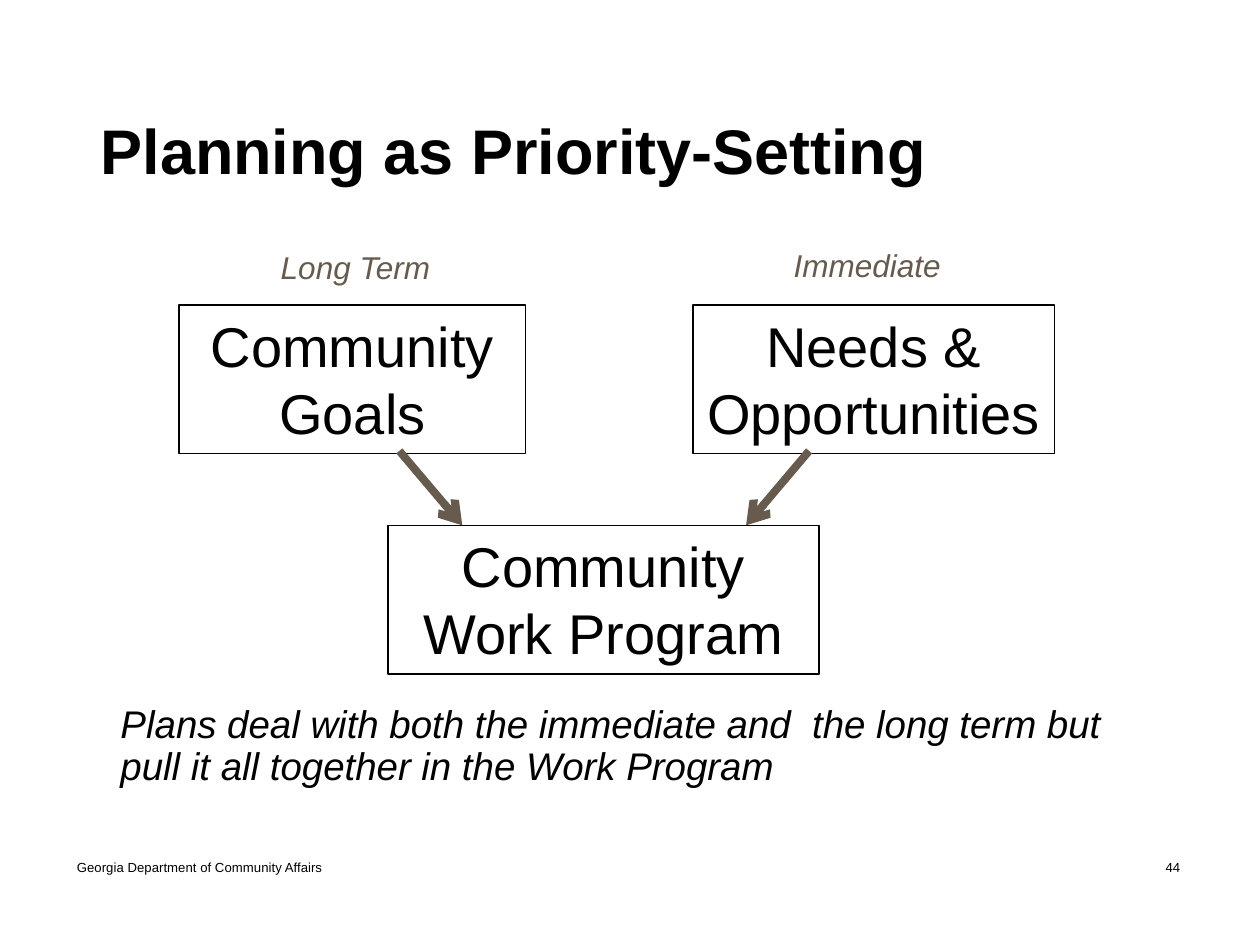
import pptx
import pptx.util
import pptx.dml.color
import pptx.enum.shapes
import pptx.enum.text
import pptx.oxml
import pptx.oxml.ns
from pptx.util import Cm

BLACK, BROWN = "000000", "675B4D"
LEFT, CENTER = pptx.enum.text.PP_ALIGN.LEFT, pptx.enum.text.PP_ALIGN.CENTER
TOP, MIDDLE = pptx.enum.text.MSO_ANCHOR.TOP, pptx.enum.text.MSO_ANCHOR.MIDDLE

# Content: text, (left, top, width, height) in cm, then style
TEXTS = [
    ("Planning as Priority-Setting", (1.78, 1.52, 21.87, 3.18),
     dict(size=36, bold=True, anchor=MIDDLE, spacing=0.9)),
    ("Long Term", (5.41, 4.88, 4.24, 1.03), dict(size=18, color=BROWN, italic=True)),
    ("Immediate", (15.75, 4.83, 4.52, 1.03), dict(size=18, color=BROWN, italic=True)),
    ("Plans deal with both the immediate and  the long term but "
     "pull it all together in the Work Program", (2.18, 14.1, 21.03, 2.34),
     dict(size=22, italic=True, spacing=0.9)),
    ("Georgia Department of Community Affairs", (1.3, 16.97, 8.59, 1.02),
     dict(size=7.5, anchor=MIDDLE)),
    ("44", (23.01, 16.54, 1.27, 1.88), dict(size=7.5, anchor=MIDDLE, align=CENTER)),
]
BOX_HEIGHT = 3
BOXES = [  # text, left, top, width
    ("Community Goals", 3.61, 6.15, 6.99),
    ("Needs & Opportunities", 13.97, 6.15, 7.29),
    ("Community Work Program", 7.82, 10.59, 8.69),
]
ARROW_TOP, ARROW_BOTTOM = 9.09, 10.59
ARROWS = [(8.05, 9.32), (16.31, 15.04)]  # start x, end x


def rgb(color):
    return pptx.dml.color.RGBColor.from_string(color)


def write(shape, text, size, color=BLACK, bold=False, italic=False,
          align=LEFT, anchor=TOP, spacing=1.0):
    frame = shape.text_frame
    frame.word_wrap = True
    frame.vertical_anchor = anchor
    paragraph = frame.paragraphs[0]
    paragraph.text = text
    paragraph.alignment = align
    paragraph.line_spacing = spacing
    font = paragraph.font
    font.name, font.size = "Arial", pptx.util.Pt(size)
    font.bold, font.italic = bold, italic
    font.color.rgb = rgb(color)


def add_box(page, text, left, top, width):
    box = page.shapes.add_shape(pptx.enum.shapes.MSO_SHAPE.RECTANGLE,
                                Cm(left), Cm(top), Cm(width), Cm(BOX_HEIGHT))
    box.shadow.inherit = False
    box.fill.background()
    box.line.color.rgb = rgb(BLACK)
    box.line.width = pptx.util.Pt(0.75)
    write(box, text, 32, align=CENTER)


def add_arrow(page, start, end):
    arrow = page.shapes.add_connector(pptx.enum.shapes.MSO_CONNECTOR.STRAIGHT,
                                      Cm(start), Cm(ARROW_TOP), Cm(end), Cm(ARROW_BOTTOM))
    arrow.line.color.rgb = rgb(BROWN)
    arrow.line.width = pptx.util.Pt(4.5)
    # Open arrowhead, and no shadow
    head = pptx.oxml.parse_xml(
        f'<a:tailEnd {pptx.oxml.ns.nsdecls("a")} type="arrow"/>')
    arrow.line._get_or_add_ln().append(head)
    effects = pptx.oxml.parse_xml(f'<a:effectLst {pptx.oxml.ns.nsdecls("a")}/>')
    arrow._element.spPr.append(effects)


def main():
    deck = pptx.Presentation()
    deck.slide_width, deck.slide_height = Cm(25.4), Cm(19.05)
    page = deck.slides.add_slide(deck.slide_layouts[6])

    for text, place, style in TEXTS:
        write(page.shapes.add_textbox(*map(Cm, place)), text, **style)
    for box in BOXES:
        add_box(page, *box)
    for start, end in ARROWS:
        add_arrow(page, start, end)

    deck.save("out.pptx")


if __name__ == "__main__":
    main()
